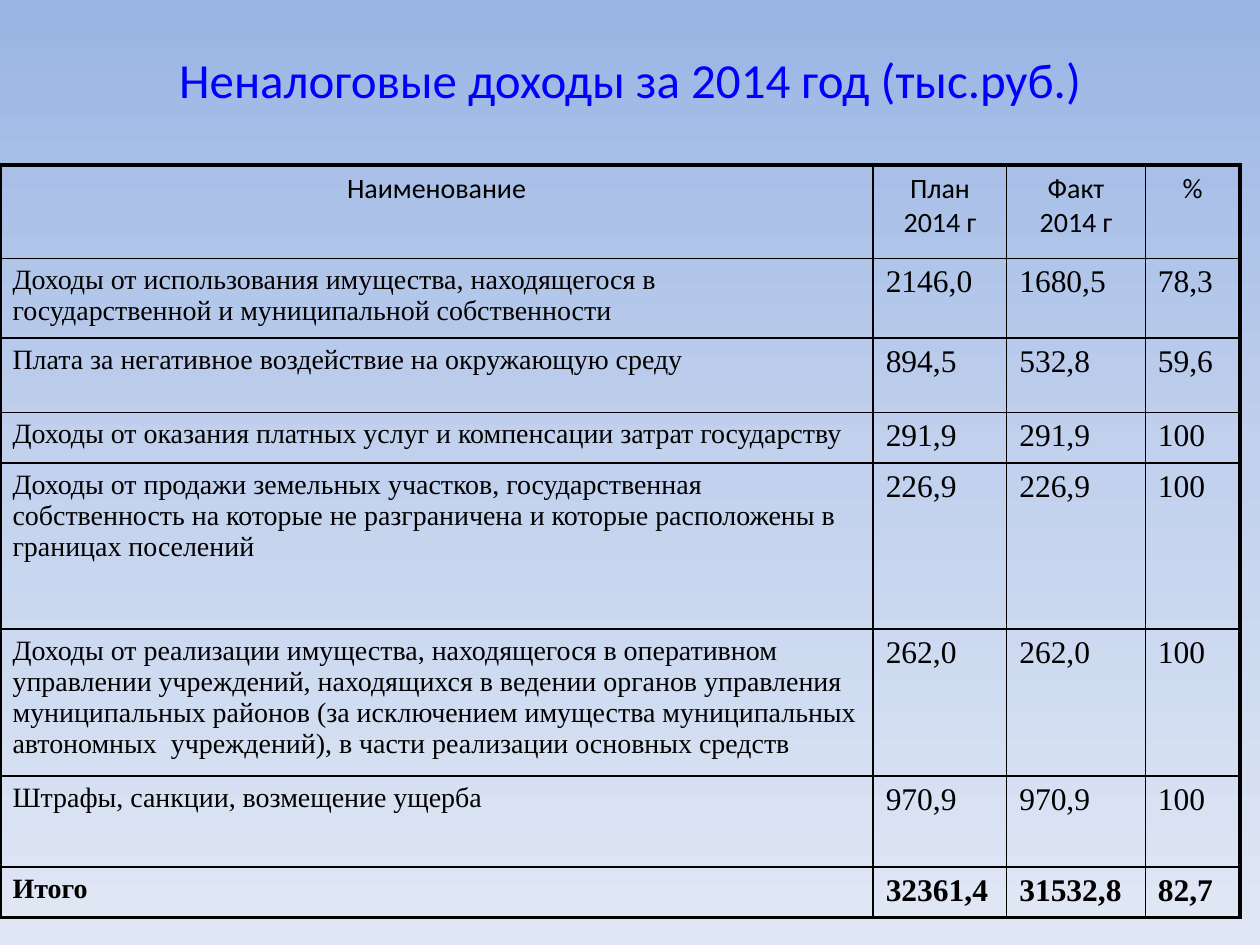
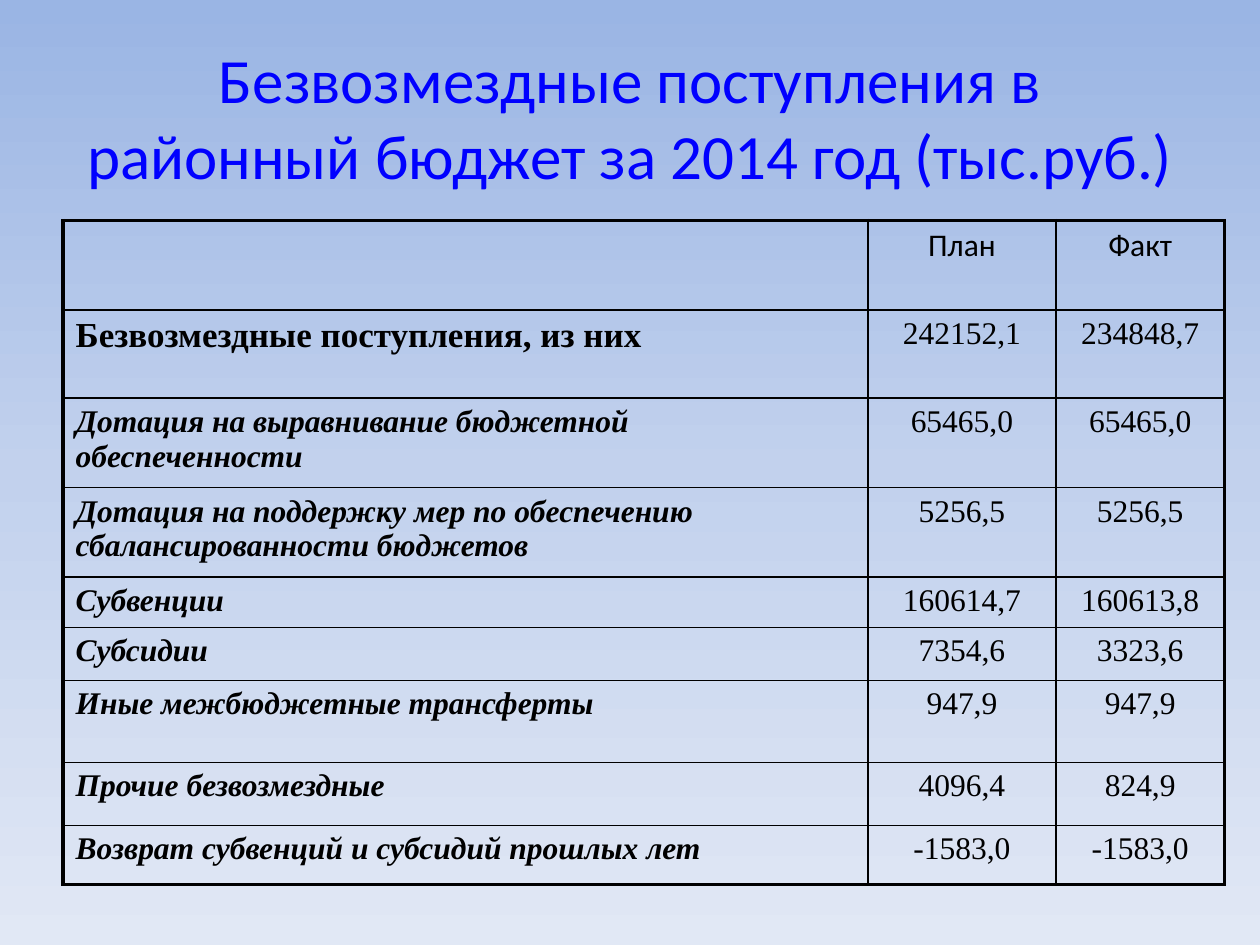
"""Build two slides with tables of non-tax income and grants for 2014."""
from copy import deepcopy

from lxml.etree import SubElement
from pptx import Presentation
from pptx.dml.color import RGBColor
from pptx.enum.text import MSO_ANCHOR, PP_ALIGN
from pptx.oxml.ns import qn
from pptx.util import Inches, Pt

BLACK = RGBColor(0x00, 0x00, 0x00)
TITLE_BLUE = RGBColor(0x00, 0x00, 0xFF)
BACKGROUND_STOPS = [
    (0, RGBColor(0x9A, 0xB5, 0xE4)),
    (50, RGBColor(0xC2, 0xD1, 0xED)),
    (100, RGBColor(0xE1, 0xE8, 0xF5)),
]
HEADING_FONT, BODY_FONT = "Calibri", "Times New Roman"
OUTER_LINE, INNER_LINE = Pt(2.25), Pt(1)

INCOME_ROWS = [
    ("Наименование", "План 2014 г", "Факт 2014 г", "%"),
    ("Доходы от использования имущества, находящегося в государственной и "
     "муниципальной собственности", "2146,0", "1680,5", "78,3"),
    ("Плата за негативное воздействие на окружающую среду", "894,5", "532,8", "59,6"),
    ("Доходы от оказания платных услуг и компенсации затрат государству",
     "291,9", "291,9", "100"),
    ("Доходы от продажи земельных участков, государственная собственность на которые "
     "не разграничена и которые расположены в границах поселений", "226,9", "226,9", "100"),
    ("Доходы от реализации имущества, находящегося в оперативном управлении учреждений, "
     "находящихся в ведении органов управления муниципальных районов (за исключением "
     "имущества муниципальных автономных  учреждений), в части реализации основных средств",
     "262,0", "262,0", "100"),
    ("Штрафы, санкции, возмещение ущерба", "970,9", "970,9", "100"),
    ("Итого", "32361,4", "31532,8", "82,7"),
]
GRANT_ROWS = [
    ("", "План", "Факт"),
    ("Безвозмездные поступления, из них", "242152,1", "234848,7"),
    ("Дотация на выравнивание бюджетной обеспеченности", "65465,0", "65465,0"),
    ("Дотация на поддержку мер по обеспечению сбалансированности бюджетов",
     "5256,5", "5256,5"),
    ("Субвенции", "160614,7", "160613,8"),
    ("Субсидии", "7354,6", "3323,6"),
    ("Иные межбюджетные трансферты", "947,9", "947,9"),
    ("Прочие безвозмездные", "4096,4", "824,9"),
    ("Возврат субвенций и субсидий прошлых лет", "-1583,0", "-1583,0"),
]


def set_background(master):
    """Give the slide master the shared vertical gradient."""
    fill = master.background.fill
    fill.gradient()
    fill.gradient_angle = 270
    stop_list = master.element.find(".//" + qn("p:bg")).find(".//" + qn("a:gsLst"))
    stop_list.insert(1, deepcopy(stop_list[0]))
    for stop, (percent, color) in zip(fill.gradient_stops, BACKGROUND_STOPS):
        stop.position = percent / 100
        stop.color.rgb = color


def write_text(text_frame, text, color, alignment, font_format):
    """Write one paragraph with the given font values."""
    paragraph = text_frame.paragraphs[0]
    paragraph.alignment = alignment
    run = paragraph.add_run()
    run.text = text
    run.font.color.rgb = color
    for name, value in font_format.items():
        setattr(run.font, name, value)


def add_title(slide, text, left, top, size):
    """Add the blue centred title."""
    text_frame = slide.shapes.add_textbox(
        Inches(left), Inches(top), Inches(9), Inches(1.25)).text_frame
    text_frame.word_wrap = True
    text_frame.vertical_anchor = MSO_ANCHOR.MIDDLE
    write_text(text_frame, text, TITLE_BLUE, PP_ALIGN.CENTER,
               {"name": HEADING_FONT, "size": Pt(size)})


def set_borders(cell, outer_sides):
    """Draw black borders, thicker on the sides at the table edge."""
    properties = cell._tc.get_or_add_tcPr()
    for side, is_outer in outer_sides.items():
        width = OUTER_LINE if is_outer else INNER_LINE
        line = SubElement(properties, qn("a:ln" + side), w=str(width))
        SubElement(SubElement(line, qn("a:solidFill")), qn("a:srgbClr"), val=str(BLACK))


def add_bordered_table(slide, rows, left, top, widths, heights, cell_style):
    """Add an unfilled table whose text style comes from cell_style(row, column)."""
    table = slide.shapes.add_table(
        len(rows), len(widths), Inches(left), Inches(top),
        Inches(sum(widths)), Inches(sum(heights))).table
    table.first_row = table.horz_banding = False
    for column, width in zip(table.columns, widths):
        column.width = Inches(width)
    for row, height in zip(table.rows, heights):
        row.height = Inches(height)
    for row_index, values in enumerate(rows):
        for column_index, text in enumerate(values):
            cell = table.cell(row_index, column_index)
            set_borders(cell, {
                "L": column_index == 0,
                "R": column_index == len(widths) - 1,
                "T": row_index == 0,
                "B": row_index == len(rows) - 1,
            })
            cell.fill.background()
            if text:
                alignment, font_format = cell_style(row_index, column_index)
                write_text(cell.text_frame, text, BLACK, alignment, font_format)


def income_style(row_index, column_index):
    """Return alignment and font values for an income cell."""
    if row_index == 0:
        return PP_ALIGN.CENTER, {"name": HEADING_FONT, "size": Pt(16), "bold": False}
    size = Pt(16 if column_index == 0 else 18)
    is_total = row_index == len(INCOME_ROWS) - 1
    return PP_ALIGN.LEFT, {"name": BODY_FONT, "size": size, "bold": is_total}


def grant_style(row_index, column_index):
    """Return alignment and font values for a grant cell."""
    if row_index == 0:
        return PP_ALIGN.CENTER, {"name": HEADING_FONT, "size": Pt(18), "bold": False}
    if column_index > 0:
        return PP_ALIGN.CENTER, {"name": BODY_FONT, "size": Pt(18), "bold": False}
    is_sum = row_index == 1
    return PP_ALIGN.LEFT, {"name": BODY_FONT, "size": Pt(20 if is_sum else 18),
                           "bold": True, "italic": not is_sum}


def add_income_slide(presentation):
    """Add the slide on non-tax income."""
    slide = presentation.slides.add_slide(presentation.slide_layouts[6])
    add_title(slide, "Неналоговые доходы за 2014 год (тыс.руб.)", 0.5, 0, 28)
    add_bordered_table(slide, INCOME_ROWS, 0, 1.31, [6.93, 1.06, 1.1, 0.75],
                       [0.74, 0.6, 0.59, 0.38, 1.32, 1.11, 0.72, 0.4], income_style)


def add_grant_slide(presentation):
    """Add the slide on grants to the district budget."""
    slide = presentation.slides.add_slide(presentation.slide_layouts[6])
    add_title(slide, "Безвозмездные поступления в районный бюджет за 2014 год (тыс.руб.)",
              0.5, 0.3, 36)
    add_bordered_table(slide, GRANT_ROWS, 0.5, 1.75, [6.39, 1.49, 1.34],
                       [0.71, 0.7, 0.71, 0.71, 0.38, 0.42, 0.65, 0.5, 0.47], grant_style)


def main():
    """Build and save the presentation."""
    presentation = Presentation()
    presentation.slide_width, presentation.slide_height = Inches(10), Inches(7.5)
    set_background(presentation.slide_master)
    add_income_slide(presentation)
    add_grant_slide(presentation)
    presentation.save("out.pptx")


if __name__ == "__main__":
    main()
